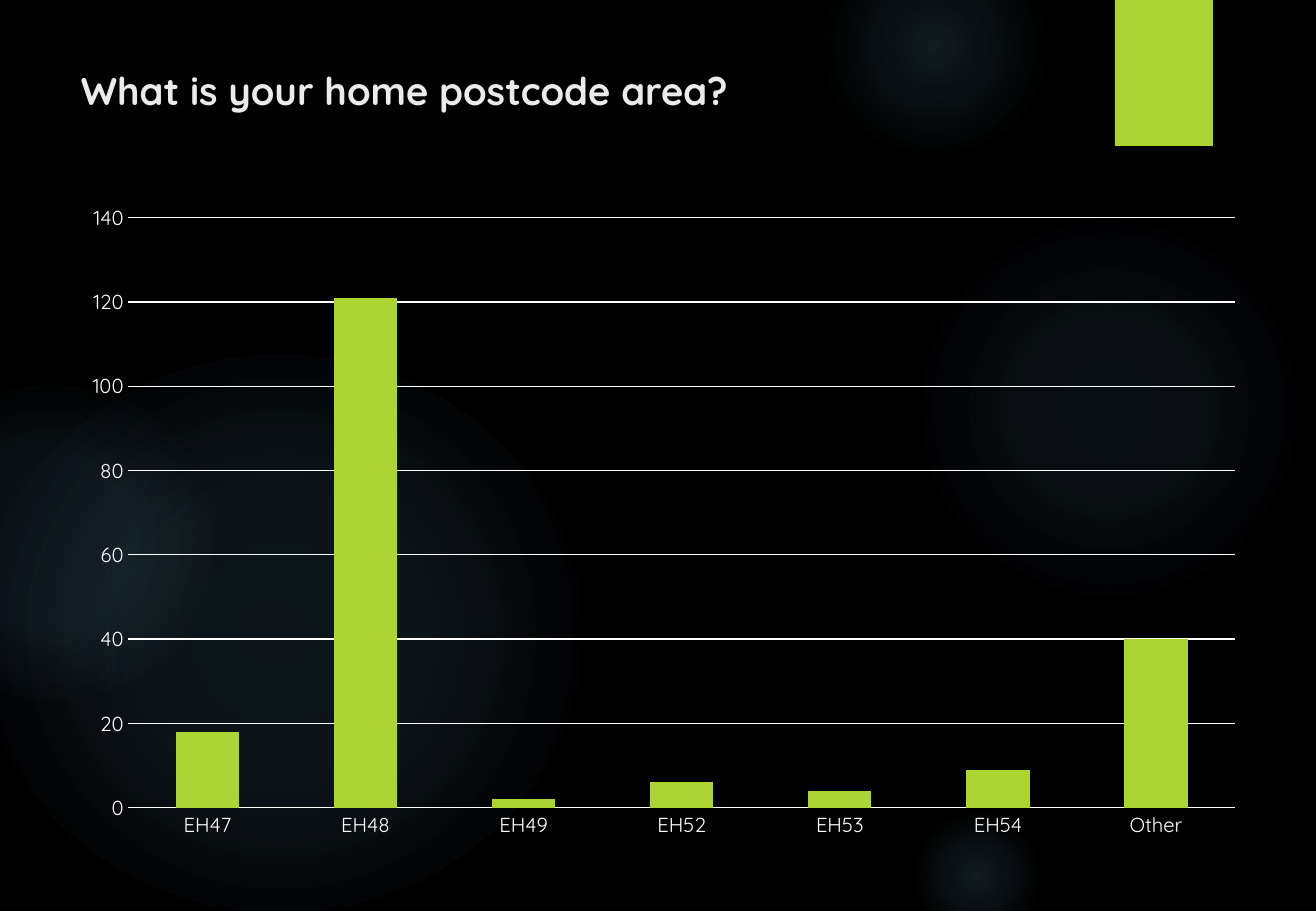
from pptx import Presentation
from pptx.chart.data import CategoryChartData as ChartData
from pptx.dml.color import RGBColor as Rgb
from pptx.enum.chart import XL_CHART_TYPE as Kind, XL_TICK_MARK as Tick
from pptx.enum.shapes import MSO_SHAPE as Form
from pptx.enum.text import MSO_ANCHOR as Anchor, PP_ALIGN as Align
from pptx.oxml import parse_xml
from pptx.oxml.ns import nsdecls, qn
from pptx.util import Pt

TITLE = "What is your home postcode area?"
COUNTS = {
    "EH47": 18, "EH48": 121, "EH49": 2, "EH52": 6,
    "EH53": 4, "EH54": 9, "Other": 40,
}
GLOWS = [
    ((906, 222, 406, 374), ((0, 7), (36, 6), (69, 0))),
    ((819, -61, 231, 213), ((0, 14), (36, 7), (73, 0))),
    ((906, 810, 142, 131), ((0, 14), (36, 7), (66, 0))),
    ((-22, 355, 604, 556), ((0, 11), (36, 10), (75, 0))),
    ((-120, 385, 340, 313), ((0, 8), (36, 8), (72, 0))),
]
SIZE = (1316, 911)
TAB_BOX = (1115, 0, 98, 146)
TITLE_BOX = (69, 61, 1016, 132)
CHART_BOX = (69, 192, 1190, 659)
COLORS = {
    "back": "000000", "glow": "7AC4F0", "lime": "ACD433",
    "title": "EBEBEB", "white": "FFFFFF",
}
FONT = "Quicksand"
SCALE = 914400 / 121.5


def emu(box):
    return [round(n * SCALE) for n in box]


def color(name):
    return Rgb.from_string(COLORS[name])


def style(font, size, name, bold=False):
    font.name = FONT
    font.size = Pt(size)
    font.bold = bold
    font.color.rgb = color(name)


def paint(fill, name):
    fill.solid()
    fill.fore_color.rgb = color(name)


def add_form(slide, form, box):
    shape = slide.shapes.add_shape(form, *emu(box))
    shape.shadow.inherit = False
    shape.line.fill.background()
    return shape


def add_glow(slide, box, stops):
    shape = add_form(slide, Form.OVAL, box)
    shape.fill.background()
    marks = "".join(
        f'<a:gs pos="{pos * 1000}"><a:srgbClr val="{COLORS["glow"]}">'
        f'<a:alpha val="{alpha * 1000}"/></a:srgbClr></a:gs>'
        for pos, alpha in stops
    )
    grad = parse_xml(
        f'<a:gradFill {nsdecls("a")} rotWithShape="1"><a:gsLst>{marks}</a:gsLst>'
        '<a:path path="circle"><a:fillToRect l="50000" t="50000" r="50000" b="50000"/>'
        "</a:path></a:gradFill>"
    )
    props = shape._element.spPr
    props.replace(props.find(qn("a:noFill")), grad)


def add_title(slide):
    frame = slide.shapes.add_textbox(*emu(TITLE_BOX)).text_frame
    frame.word_wrap = True
    frame.vertical_anchor = Anchor.TOP
    para = frame.paragraphs[0]
    para.text = TITLE
    para.alignment = Align.JUSTIFY
    style(para.font, 22.8, "title", True)


def add_bars(slide):
    data = ChartData()
    data.categories = list(COUNTS)
    data.add_series("Series 1", list(COUNTS.values()))
    chart = slide.shapes.add_chart(
        Kind.COLUMN_CLUSTERED, *emu(CHART_BOX), data
    ).chart
    chart.has_legend = False
    chart.has_title = False
    style(chart.font, 10, "white")
    for axis in (chart.category_axis, chart.value_axis):
        axis.major_tick_mark = axis.minor_tick_mark = Tick.NONE
        axis.format.line.fill.background()
        style(axis.tick_labels.font, 12, "white")
    axis = chart.value_axis
    axis.minimum_scale, axis.maximum_scale, axis.major_unit = 0, 140, 20
    grid = axis.major_gridlines.format.line
    grid.width = Pt(0.75)
    paint(grid.fill, "white")
    plot = chart.plots[0]
    plot.gap_width = 150
    plot.vary_by_categories = False
    paint(plot.series[0].format.fill, "lime")


def main():
    deck = Presentation()
    deck.slide_width, deck.slide_height = emu(SIZE)
    slide = deck.slides.add_slide(deck.slide_layouts[6])
    paint(slide.background.fill, "back")
    for box, stops in GLOWS:
        add_glow(slide, box, stops)
    paint(add_form(slide, Form.RECTANGLE, TAB_BOX).fill, "lime")
    add_title(slide)
    add_bars(slide)
    deck.save("out.pptx")


if __name__ == "__main__":
    main()
